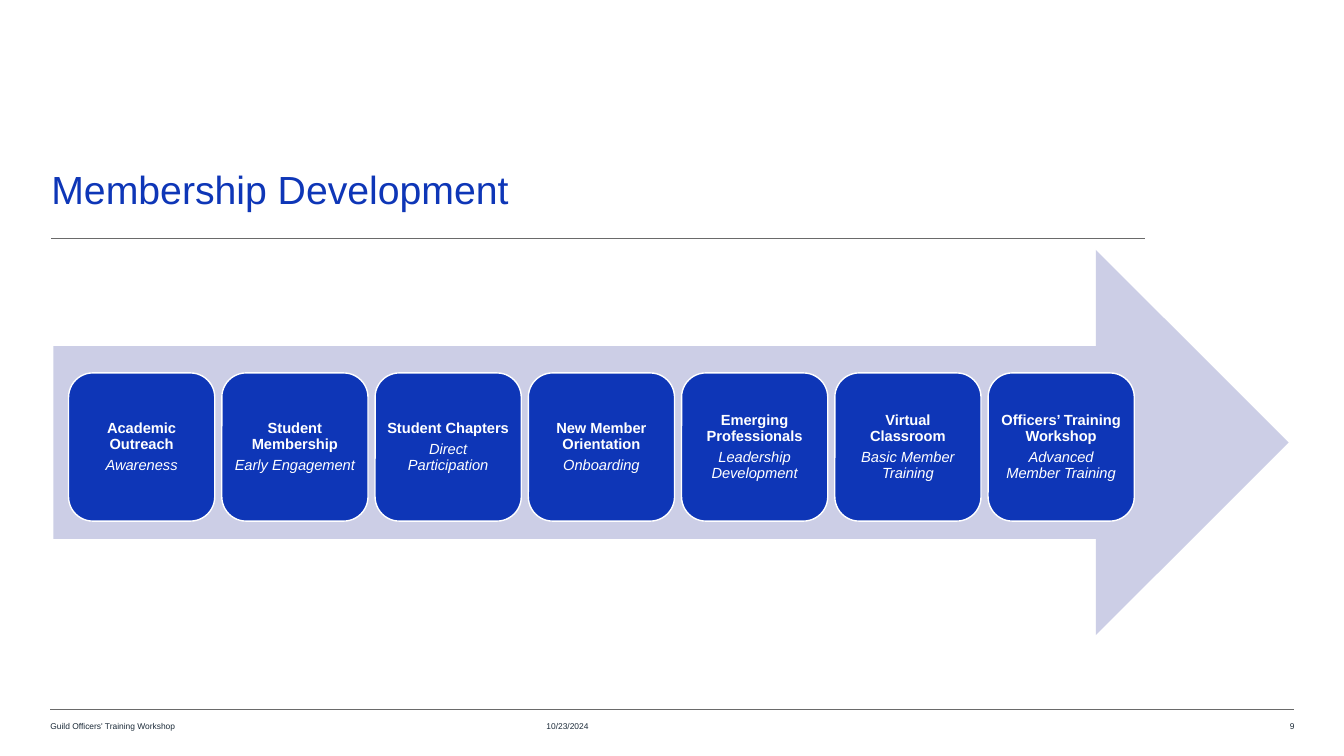
from dataclasses import dataclass

import pptx
import pptx.dml.color
import pptx.enum.shapes
import pptx.enum.text
import pptx.oxml
import pptx.oxml.ns
import pptx.util

RGB = pptx.dml.color.RGBColor
SHAPE = pptx.enum.shapes.MSO_SHAPE
ALIGN = pptx.enum.text.PP_ALIGN
ANCHOR = pptx.enum.text.MSO_ANCHOR

BLUE = RGB(0x0E, 0x36, 0xB7)
PALE = RGB(0xCC, 0xCE, 0xE6)
GRAY = RGB(0x6A, 0x6A, 0x6A)
INK = RGB(0x1C, 0x2B, 0x39)
WHITE = RGB(0xFF, 0xFF, 0xFF)
FONT = "Arial"
SCALE = 9144  # EMU per px, 100 px to the inch

CARD_LEFT, CARD_TOP, CARD_WIDTH, CARD_HEIGHT = 68, 370, 145, 147
CARD_STEP = 152


@dataclass(frozen=True)
class Stage:
    name: str
    goal: str


@dataclass(frozen=True)
class Rule:
    left: int
    right: int
    top: int


@dataclass(frozen=True)
class Note:
    text: str
    left: int
    width: int
    align: ALIGN = ALIGN.LEFT


STAGES = [
    Stage("Academic Outreach", "Awareness"),
    Stage("Student Membership", "Early Engagement"),
    Stage("Student Chapters", "Direct Participation"),
    Stage("New Member Orientation", "Onboarding"),
    Stage("Emerging Professionals", "Leadership Development"),
    Stage("Virtual Classroom", "Basic Member Training"),
    Stage("Officers’ Training Workshop", "Advanced Member Training"),
]
RULES = [Rule(51, 1136, 236), Rule(50, 1283, 704)]
NOTES = [
    Note("Guild Officers' Training Workshop", 50, 441),
    Note("10/23/2024", 542, 66),
    Note("9", 1218, 66, ALIGN.RIGHT),
]


def px(count: int) -> pptx.util.Emu:
    return pptx.util.Emu(count * SCALE)


def set_frame(frame, inset: int, anchor: ANCHOR) -> None:
    frame.word_wrap = True
    frame.vertical_anchor = anchor
    frame.margin_left = frame.margin_right = px(inset)
    frame.margin_top = frame.margin_bottom = px(inset)


def add_run(para, text: str, size: float, color: RGB,
            bold: bool = False, italic: bool = False) -> None:
    run = para.add_run()
    run.text = text
    font = run.font
    font.name, font.size = FONT, pptx.util.Pt(size)
    font.bold, font.italic = bold, italic
    font.color.rgb = color


def set_title(slide, text: str) -> None:
    title = slide.shapes.title
    title.left, title.top = px(51), px(172)
    title.width, title.height = px(1085), px(40)
    set_frame(title.text_frame, 0, ANCHOR.TOP)
    para = title.text_frame.paragraphs[0]
    para.alignment = ALIGN.LEFT
    para.line_spacing = pptx.util.Pt(28)
    add_run(para, text, 28, BLUE)


def add_rule(slide, rule: Rule) -> None:
    line = slide.shapes.add_connector(
        pptx.enum.shapes.MSO_CONNECTOR.STRAIGHT,
        px(rule.left), px(rule.top), px(rule.right), px(rule.top))
    line.line.color.rgb = GRAY
    line.line.width = pptx.util.Pt(0.5)
    props = line._element.spPr
    props.append(pptx.oxml.parse_xml(
        f"<a:effectLst {pptx.oxml.ns.nsdecls('a')}/>"))


def add_note(slide, note: Note) -> None:
    box = slide.shapes.add_textbox(
        px(note.left), px(715), px(note.width), px(10))
    set_frame(box.text_frame, 0, ANCHOR.TOP)
    para = box.text_frame.paragraphs[0]
    para.alignment = note.align
    add_run(para, note.text, 6, INK)


def add_arrow(slide) -> None:
    arrow = slide.shapes.add_shape(
        SHAPE.RIGHT_ARROW, px(53), px(248), px(1225), px(382))
    arrow.shadow.inherit = False
    arrow.fill.solid()
    arrow.fill.fore_color.rgb = PALE
    arrow.line.fill.background()


def add_card(slide, stage: Stage, left: int) -> None:
    card = slide.shapes.add_shape(
        SHAPE.ROUNDED_RECTANGLE,
        px(left), px(CARD_TOP), px(CARD_WIDTH), px(CARD_HEIGHT))
    card.shadow.inherit = False
    card.fill.solid()
    card.fill.fore_color.rgb = BLUE
    card.line.color.rgb = WHITE
    card.line.width = pptx.util.Pt(1)
    frame = card.text_frame
    set_frame(frame, 5, ANCHOR.MIDDLE)
    name, goal = frame.paragraphs[0], frame.add_paragraph()
    for para in (name, goal):
        para.alignment = ALIGN.CENTER
        para.line_spacing = 0.9
        para.space_after = pptx.util.Pt(3.7)
    add_run(name, stage.name, 10.5, WHITE, bold=True)
    add_run(goal, stage.goal, 10.5, WHITE, italic=True)


def main() -> None:
    deck = pptx.Presentation()
    deck.slide_width, deck.slide_height = px(1333), px(750)
    slide = deck.slides.add_slide(deck.slide_layouts[5])
    set_title(slide, "Membership Development")
    for rule in RULES:
        add_rule(slide, rule)
    for note in NOTES:
        add_note(slide, note)
    add_arrow(slide)
    for index, stage in enumerate(STAGES):
        add_card(slide, stage, CARD_LEFT + index * CARD_STEP)
    deck.save("out.pptx")


if __name__ == "__main__":
    main()
